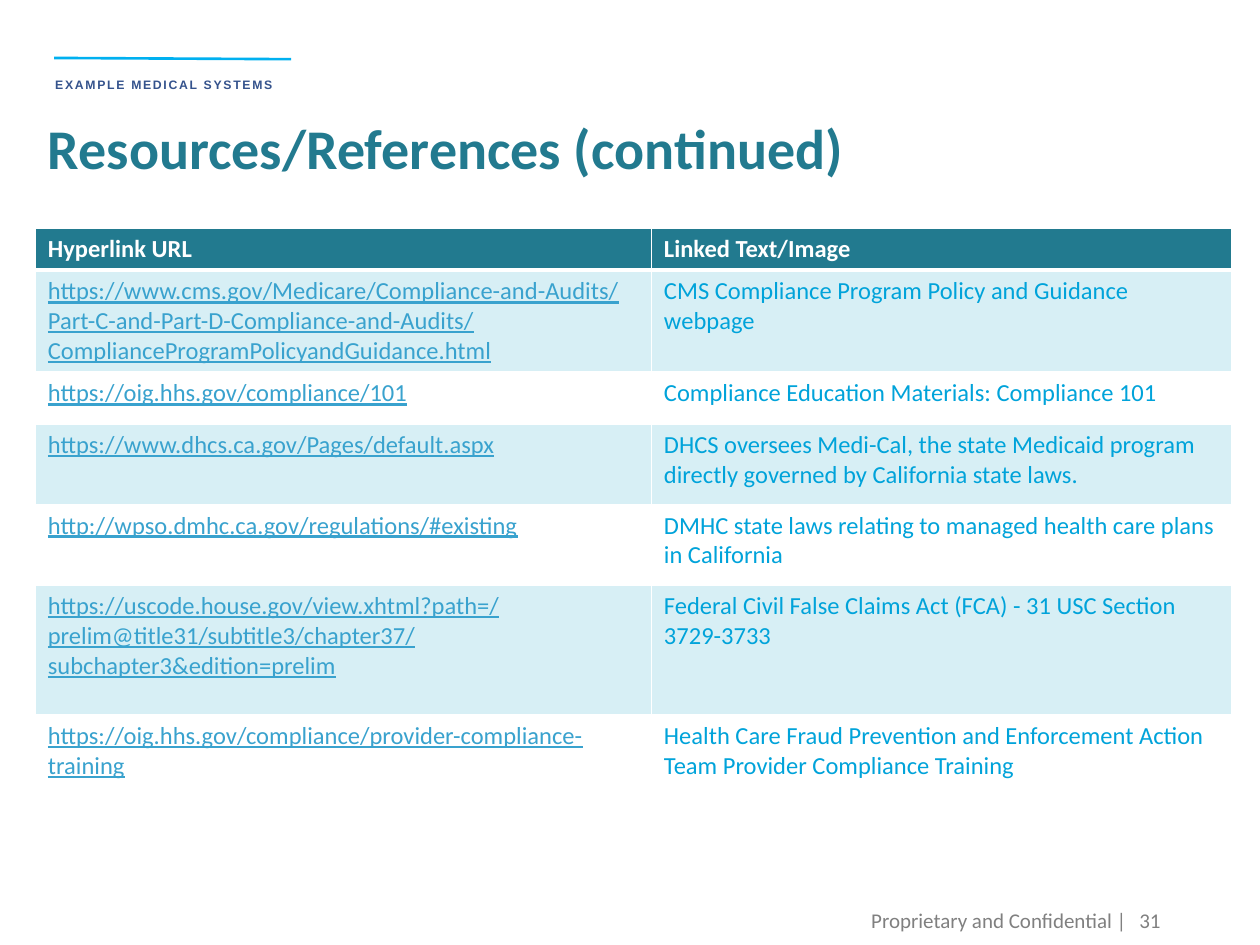
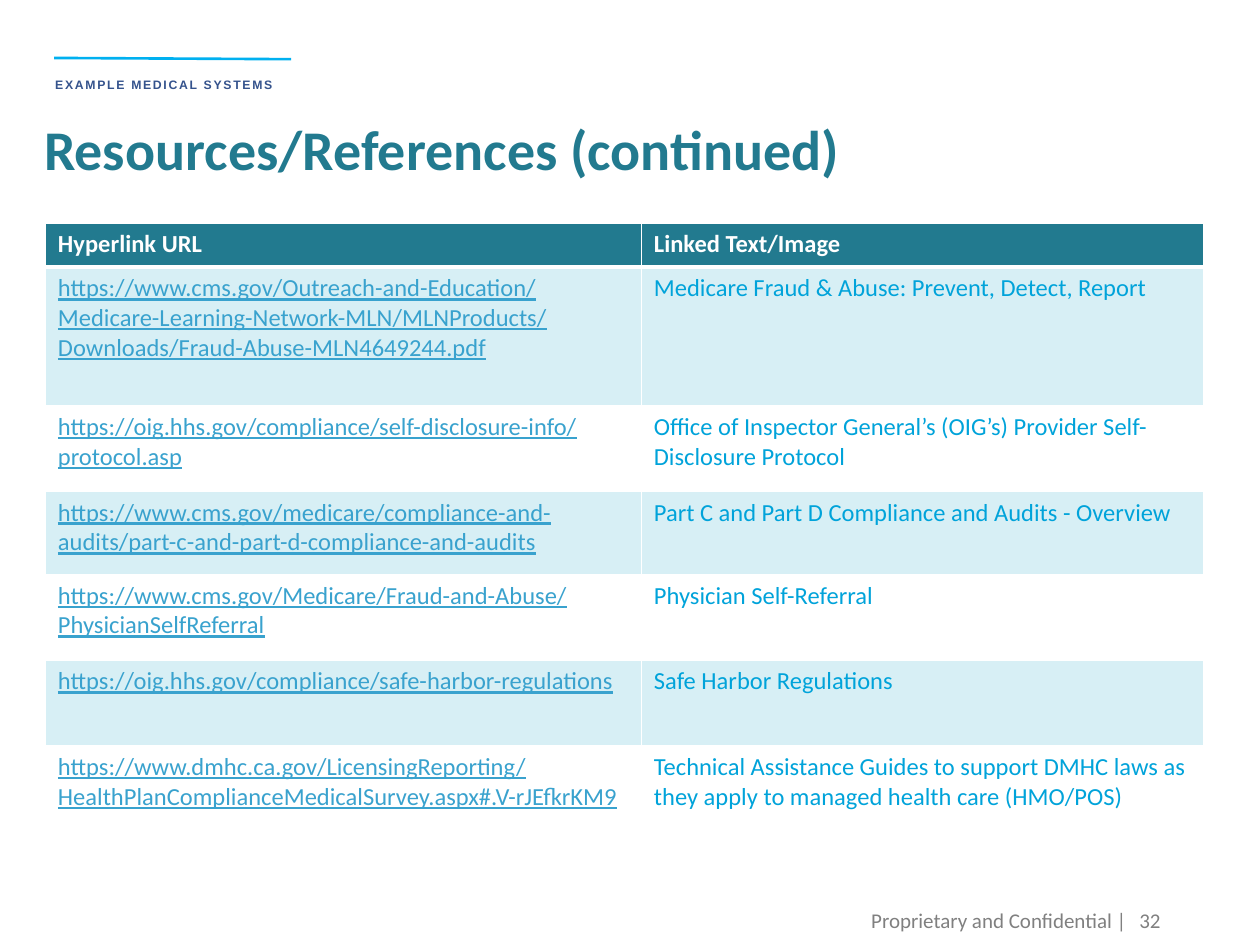
"""Build two slides of resource links in one shared style."""
from dataclasses import dataclass
from typing import NamedTuple

from lxml.etree import SubElement as Sub
from pptx import Presentation
from pptx.dml.color import RGBColor as Color
from pptx.enum.shapes import MSO_CONNECTOR as Link
from pptx.enum.text import MSO_ANCHOR as Anchor, MSO_AUTO_SIZE as Fit, PP_ALIGN as Align
from pptx.oxml.ns import qn
from pptx.util import Inches, Pt

GRID = 0.1


@dataclass(frozen=True)
class Theme:
    face: str = "Calibri"
    brand_face: str = "Arial"
    teal: str = "227A8F"
    pale: str = "D7EFF5"
    white: str = "FFFFFF"
    link: str = "39A2CE"
    body: str = "00A3DA"
    grey: str = "808080"
    navy: str = "35538D"
    rule: str = "00B0F0"
    title_size: float = 32
    cell_size: float = 14
    foot_size: float = 12
    brand_size: float = 7


class Box(NamedTuple):
    col: float
    row: float
    wide: float
    high: float


class Entry(NamedTuple):
    url: str
    label: str
    high: float


@dataclass(frozen=True)
class Page:
    number: int
    title: Box
    corner: tuple[float, float]
    wide: tuple[float, float]
    head: float
    entries: tuple[Entry, ...]


THEME = Theme()
TITLE = "Resources/References (continued)"
BRAND = "EXAMPLE MEDICAL SYSTEMS"
HEADS = ("Hyperlink URL", "Linked Text/Image")
BRAND_BOX = Box(3.4, 4.6, 20.4, 2.9)
RULE_BOX = Box(4.3, 4.6, 18.8, 0.1)
FOOT_BOX = Box(56.6, 71, 33.8, 4)
NUMBER_BOX = Box(88.5, 71, 4.6, 4)

PAGES = (
    Page(31, Box(2.8, 8.5, 90.4, 6.4), (2.8, 18.1), (48.9, 46.1), 3.2, (
        Entry("https://www.cms.gov/Medicare/Compliance-and-Audits/Part-C-and-Part-D-Compliance-and-Audits/ComplianceProgramPolicyandGuidance.html",
              "CMS Compliance Program Policy and Guidance webpage", 8.1),
        Entry("https://oig.hhs.gov/compliance/101",
              "Compliance Education Materials: Compliance 101", 4.1),
        Entry("https://www.dhcs.ca.gov/Pages/default.aspx",
              "DHCS oversees Medi-Cal, the state Medicaid program directly governed by California state laws.", 6.4),
        Entry("http://wpso.dmhc.ca.gov/regulations/#existing",
              "DMHC state laws relating to managed health care plans in California", 6.4),
        Entry("https://uscode.house.gov/view.xhtml?path=/prelim@title31/subtitle3/chapter37/subchapter3&edition=prelim",
              "Federal Civil False Claims Act (FCA) - 31 USC Section 3729-3733", 10.3),
        Entry("https://oig.hhs.gov/compliance/provider-compliance-training",
              "Health Care Fraud Prevention and Enforcement Action Team Provider Compliance Training", 6.4),
    )),
    Page(32, Box(2.5, 8.6, 93.1, 6.4), (3.6, 17.7), (47.3, 44.6), 3.5, (
        Entry("https://www.cms.gov/Outreach-and-Education/Medicare-Learning-Network-MLN/MLNProducts/Downloads/Fraud-Abuse-MLN4649244.pdf",
              "Medicare Fraud & Abuse: Prevent, Detect, Report", 11),
        Entry("https://oig.hhs.gov/compliance/self-disclosure-info/protocol.asp",
              "Office of Inspector General’s (OIG’s) Provider Self-Disclosure Protocol", 6.8),
        Entry("https://www.cms.gov/medicare/compliance-and-audits/part-c-and-part-d-compliance-and-audits",
              "Part C and Part D Compliance and Audits - Overview", 6.6),
        Entry("https://www.cms.gov/Medicare/Fraud-and-Abuse/PhysicianSelfReferral",
              "Physician Self-Referral", 6.8),
        Entry("https://oig.hhs.gov/compliance/safe-harbor-regulations",
              "Safe Harbor Regulations", 6.8),
        Entry("https://www.dmhc.ca.gov/LicensingReporting/HealthPlanComplianceMedicalSurvey.aspx#.V-rJEfkrKM9",
              "Technical Assistance Guides to support DMHC laws as they apply to managed health care (HMO/POS)", 6.8),
    )),
)


def span(count: float) -> int:
    return Inches(count * GRID)


def area(box: Box) -> list[int]:
    return [span(part) for part in box]


def write(frame, text: str, *, size: float, color: str, face: str = THEME.face,
          bold: bool = False, under: bool = False, align=Align.LEFT,
          lead: float | None = None, track: float = 0) -> None:
    para = frame.paragraphs[0]
    para.alignment = align
    if lead:
        para.line_spacing = Pt(lead)
    run = para.add_run()
    run.text = text
    font = run.font
    font.name, font.size, font.bold, font.underline = face, Pt(size), bold, under
    font.color.rgb = Color.from_string(color)
    if track:
        run._r.get_or_add_rPr().set("spc", str(int(track * 100)))


def label(slide, box: Box, text: str, *, wrap: bool = True, anchor=Anchor.MIDDLE, **form) -> None:
    frame = slide.shapes.add_textbox(*area(box)).text_frame
    frame.word_wrap, frame.vertical_anchor = wrap, anchor
    write(frame, text, **form)


def brand(slide) -> None:
    label(slide, BRAND_BOX, BRAND, wrap=False, anchor=Anchor.TOP, size=THEME.brand_size,
          color=THEME.navy, face=THEME.brand_face, bold=True, lead=16, track=1)
    left, top, wide, high = area(RULE_BOX)
    rule = slide.shapes.add_connector(Link.STRAIGHT, left, top, left + wide, top + high)
    rule.line.color.rgb = Color.from_string(THEME.rule)
    rule.line.width = Pt(1.5)
    Sub(rule._element.spPr, qn("a:effectLst"))


def foot(slide, number: int) -> None:
    for box, text in ((FOOT_BOX, "Proprietary and Confidential |"), (NUMBER_BOX, str(number))):
        label(slide, box, text, size=THEME.foot_size, color=THEME.grey, align=Align.RIGHT)


def head(slide, box: Box) -> None:
    title = slide.shapes.title
    title.left, title.top, title.width, title.height = area(box)
    frame = title.text_frame
    frame.auto_size, frame.word_wrap, frame.vertical_anchor = Fit.NONE, True, Anchor.TOP
    write(frame, TITLE, size=THEME.title_size, color=THEME.teal, bold=True)


def edge(cell, top: float, base: float) -> None:
    props = cell._tc.get_or_add_tcPr()
    for side, width in (("L", 1), ("R", 1), ("T", top), ("B", base)):
        line = Sub(props, qn(f"a:ln{side}"), w=str(Pt(width)))
        Sub(Sub(line, qn("a:solidFill")), qn("a:srgbClr"), val=THEME.white)


def paint(cell, row: int) -> None:
    edge(cell, 3 if row == 1 else 1, 3 if row == 0 else 1)
    if row and row % 2 == 0:
        cell.fill.background()
    else:
        cell.fill.solid()
        cell.fill.fore_color.rgb = Color.from_string(THEME.pale if row else THEME.teal)


def chart(slide, page: Page) -> None:
    rows = (Entry(*HEADS, page.head), *page.entries)
    box = Box(*page.corner, sum(page.wide), sum(entry.high for entry in rows))
    table = slide.shapes.add_table(len(rows), len(HEADS), *area(box)).table
    table.horz_banding = False
    for column, wide in zip(table.columns, page.wide):
        column.width = span(wide)
    for row, entry in enumerate(rows):
        table.rows[row].height = span(entry.high)
        for col, text in enumerate((entry.url, entry.label)):
            cell = table.cell(row, col)
            paint(cell, row)
            color = (THEME.link, THEME.body)[col] if row else THEME.white
            write(cell.text_frame, text, size=THEME.cell_size, color=color,
                  bold=row == 0, under=row > 0 and col == 0)


def main() -> None:
    deck = Presentation()
    deck.slide_width, deck.slide_height = span(100), span(75)
    plain = deck.slide_layouts.get_by_name("Title Only")
    for page in PAGES:
        slide = deck.slides.add_slide(plain)
        brand(slide)
        foot(slide, page.number)
        chart(slide, page)
        head(slide, page.title)
    deck.save("out.pptx")


if __name__ == "__main__":
    main()
